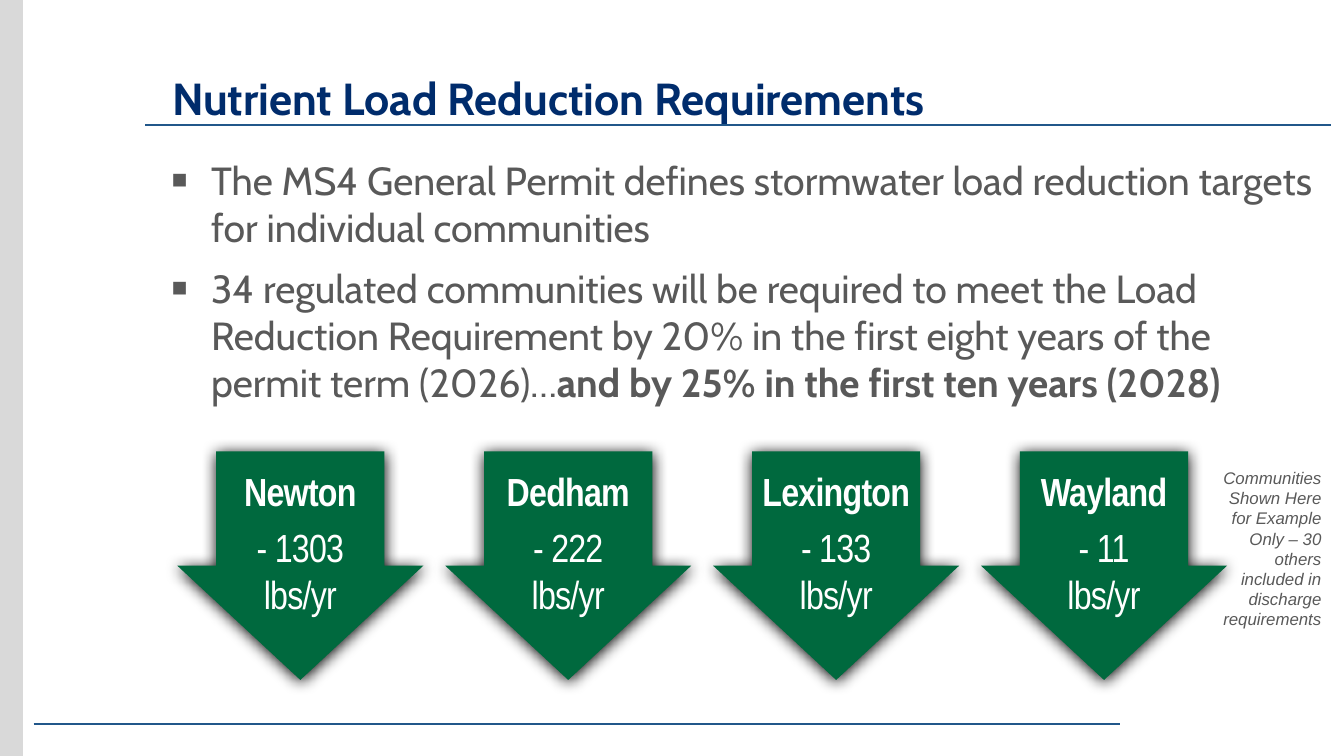
from lxml import etree
from pptx import Presentation
from pptx.dml.color import RGBColor
from pptx.enum import shapes, text
from pptx.oxml import ns
from pptx.util import Inches, Pt

# Content
TITLE = "Nutrient Load Reduction Requirements"
POINTS = [
    [("The MS4 General Permit defines stormwater load reduction targets "
      "for individual communities", False)],
    [("34 regulated communities will be required to meet the Load Reduction "
      "Requirement by 20% in the first eight years of the permit term (2026)…", False),
     ("and by 25% in the first ten years (2028)", True)],
]
# Name, load, label width
TOWNS = [("Newton", "- 1303", 1.24), ("Dedham", "- 222", 1.24),
         ("Lexington", "- 133", 1.39), ("Wayland", "- 11", 1.24)]
UNIT = "lbs/yr"
NOTE = ("Communities Shown Here for Example Only – 30 others "
        "included in discharge requirements")
RULES = [(0.25, 8.33, 5.39), (1.08, 9.9, 0.93)]

# Style
NAVY, BLUE, GREEN = "002C6C", "21578A", "00693E"
GRAY, PALE, WHITE = "595959", "D9D9D9", "FFFFFF"

# Arrow grid
FIRST, LAST, WIDE = 1.32, 7.3, 1.83
STEP = (LAST - FIRST) / (len(TOWNS) - 1)


def color(code):
    return RGBColor.from_string(code)


def place(shape, *box):
    shape.left, shape.top, shape.width, shape.height = map(Inches, box)


def frame(shape, anchor=text.MSO_ANCHOR.TOP):
    tf = shape.text_frame
    tf.word_wrap = True
    tf.auto_size = text.MSO_AUTO_SIZE.NONE
    tf.vertical_anchor = anchor
    return tf


def add_run(par, words, size, face, code, bold=False, italic=False):
    run = par.add_run()
    run.text = words
    font = run.font
    font.size, font.name = Pt(size), face
    font.bold, font.italic = bold, italic
    font.color.rgb = color(code)
    return run


def child(parent, tag, **attrs):
    return etree.SubElement(parent, ns.qn(tag), attrs)


def solid(shape, code):
    shape.shadow.inherit = False
    shape.fill.solid()
    shape.fill.fore_color.rgb = color(code)
    shape.line.fill.background()


def add_glow(shape):
    fx = shape._element.spPr.find(ns.qn("a:effectLst"))
    shade = child(fx, "a:outerShdw", blurRad=str(Pt(8.5)), dist=str(Pt(1)),
                  dir="5400000", algn="ctr", rotWithShape="0")
    child(shade, "a:srgbClr", val="000000")


def add_bullet(par):
    ppr = par._p.get_or_add_pPr()
    ppr.set("marL", str(Inches(0.3)))
    ppr.set("indent", str(-Inches(0.3)))
    child(child(ppr, "a:buClr"), "a:srgbClr", val=GRAY)
    child(ppr, "a:buSzPct", val="130000")
    child(ppr, "a:buFont", typeface="Arial")
    child(ppr, "a:buChar", char="▪")


def add_town(slide, left, name, load, span):
    group = slide.shapes.add_group_shape().shapes
    arrow = group.add_shape(shapes.MSO_SHAPE.DOWN_ARROW, Inches(left),
                            Inches(3.36), Inches(WIDE), Inches(1.7))
    arrow.adjustments[0], arrow.adjustments[1] = 0.684, 0.5
    solid(arrow, GREEN)
    add_glow(arrow)

    label = group.add_textbox(Inches(left + (WIDE - span) / 2), Inches(3.43),
                              Inches(span), Inches(1.23))
    tf = frame(label)
    for i, lines in enumerate([[name], [load, UNIT]]):
        par = tf.paragraphs[0] if i == 0 else tf.add_paragraph()
        par.alignment = text.PP_ALIGN.CENTER
        par.space_after = Pt(4.5)
        for j, line in enumerate(lines):
            if j:
                par.add_line_break()
            run = add_run(par, line, 21, "Arial Narrow", WHITE, bold=i == 0)
            run._r.get_or_add_rPr().set("spc", "-40")


deck = Presentation()
deck.slide_width, deck.slide_height = Inches(10), Inches(10 * 9 / 16)
slide = deck.slides.add_slide(deck.slide_layouts[1])
title, body = slide.placeholders

# Side band and rules
band = slide.shapes.add_shape(shapes.MSO_SHAPE.RECTANGLE, 0, 0,
                              Inches(0.17), deck.slide_height)
solid(band, PALE)
for start, end, y in RULES:
    rule = slide.shapes.add_connector(shapes.MSO_CONNECTOR.STRAIGHT, Inches(start),
                                      Inches(y), Inches(end), Inches(y))
    rule.line.color.rgb = color(BLUE)
    rule.line.width = Pt(1)
    child(rule._element.spPr, "a:effectLst")

# Title
place(title, 1.18, 0.08, 8.72, 0.9)
par = frame(title, text.MSO_ANCHOR.BOTTOM).paragraphs[0]
par.alignment = text.PP_ALIGN.LEFT
par.line_spacing = 0.9
add_run(par, TITLE, 24, "Cabin", NAVY, bold=True)

# Bullets
place(body, 1.17, 1.11, 8.74, 2.12)
tf = frame(body)
for i, point in enumerate(POINTS):
    par = tf.paragraphs[0] if i == 0 else tf.add_paragraph()
    add_bullet(par)
    par.space_before = Pt(7.5 if i else 0)
    for words, bold in point:
        add_run(par, words, 21, "Cabin", GRAY, bold)

# Town arrows
for i, town in enumerate(TOWNS):
    add_town(slide, FIRST + i * STEP, *town)

# Side note
note = slide.shapes.add_textbox(Inches(8.91), Inches(3.43), Inches(1.02), Inches(1.31))
par = frame(note).paragraphs[0]
par.alignment = text.PP_ALIGN.RIGHT
add_run(par, NOTE, 9, "Arial", GRAY, italic=True)

deck.save("out.pptx")
